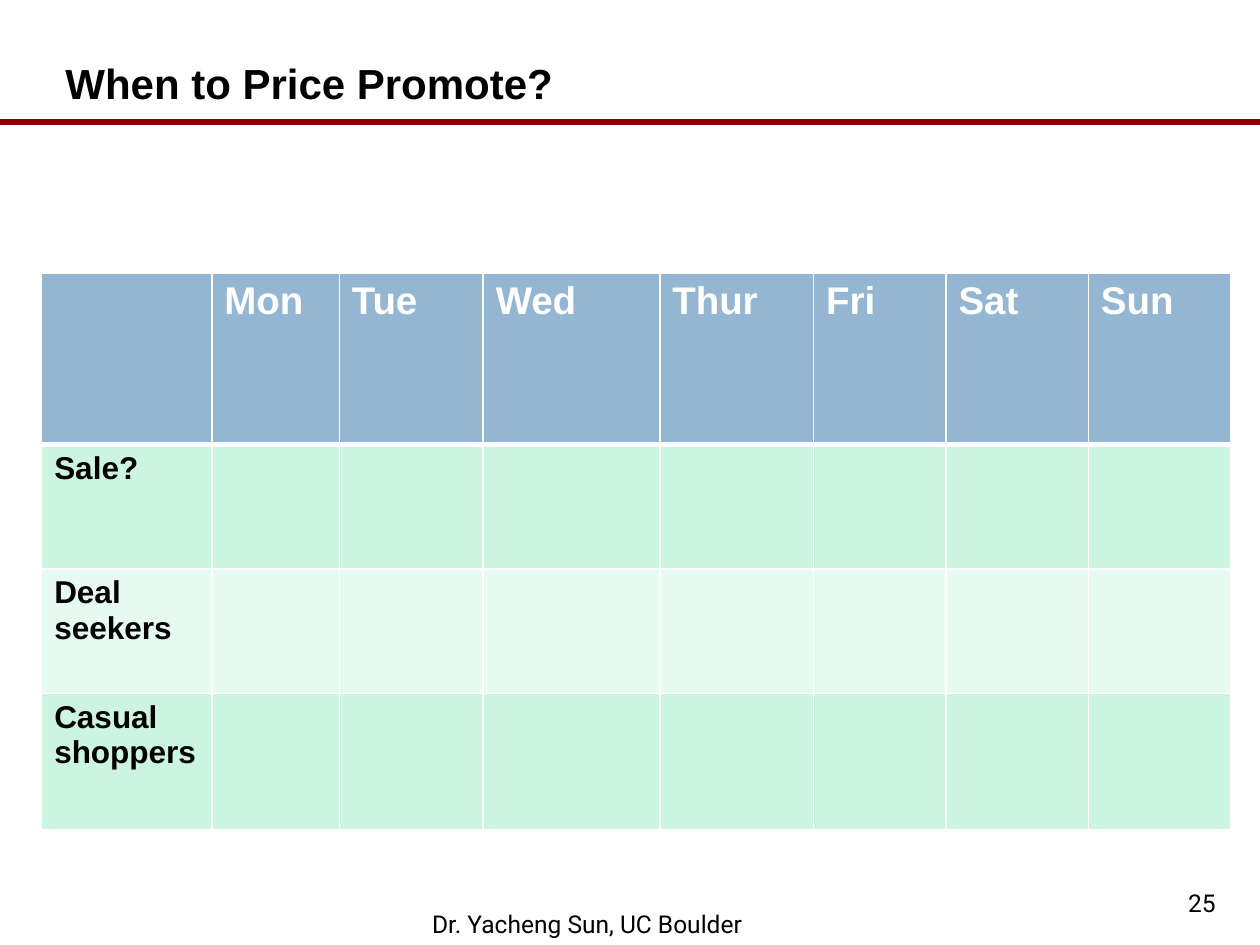
"""Build the price promotion slide with its weekly planning table."""
from lxml.etree import SubElement
from pptx import Presentation
from pptx.dml.color import RGBColor
from pptx.enum.shapes import MSO_CONNECTOR
from pptx.enum.text import MSO_ANCHOR, PP_ALIGN
from pptx.oxml.ns import qn
from pptx.util import Cm, Pt

BLACK = RGBColor(0x00, 0x00, 0x00)
WHITE = RGBColor(0xFF, 0xFF, 0xFF)
MAROON = RGBColor(0x80, 0x00, 0x00)
HEADER_BLUE = RGBColor(0x94, 0xB6, 0xD2)
MINT = RGBColor(0xCB, 0xF5, 0xE1)
PALE_MINT = RGBColor(0xE7, 0xFA, 0xF1)


def add_text(text_frame, text, font_name, size, color, bold):
    run = text_frame.paragraphs[0].add_run()
    run.text = text
    run.font.name = font_name
    run.font.size = Pt(size)
    run.font.bold = bold
    run.font.color.rgb = color


def add_border(cell, side, width):
    border = SubElement(cell._tc.get_or_add_tcPr(), qn(f"a:ln{side}"), w=str(Pt(width)))
    fill = SubElement(border, qn("a:solidFill"))
    SubElement(fill, qn("a:srgbClr"), val=str(WHITE))


presentation = Presentation()
presentation.slide_width = Cm(25.4)
presentation.slide_height = Cm(19.05)
slide = presentation.slides.add_slide(presentation.slide_layouts[6])

title_rule = slide.shapes.add_connector(
    MSO_CONNECTOR.STRAIGHT, Cm(0), Cm(2.46), Cm(25.4), Cm(2.46)
)
title_rule.line.color.rgb = MAROON
title_rule.line.width = Pt(3)
SubElement(title_rule._element.spPr, qn("a:effectLst"))

text_boxes = [
    ("When to Price Promote?", (1.07, 0.13, 23.29, 2.18),
     MSO_ANCHOR.BOTTOM, PP_ALIGN.LEFT, "Arial", 24, True),
    ("25", (19.48, 17.35, 5.28, 1.27),
     MSO_ANCHOR.BOTTOM, PP_ALIGN.RIGHT, "Roboto", 14, False),
    ("Dr. Yacheng Sun, UC Boulder", (8.46, 18.21, 9.53, 0.84),
     MSO_ANCHOR.TOP, PP_ALIGN.LEFT, "Roboto", 14, False),
]
for text, box, anchor, alignment, font_name, size, bold in text_boxes:
    shape = slide.shapes.add_textbox(*[Cm(length) for length in box])
    shape.text_frame.word_wrap = True
    shape.text_frame.vertical_anchor = anchor
    shape.text_frame.paragraphs[0].alignment = alignment
    add_text(shape.text_frame, text, font_name, size, BLACK, bold)

days = ["Mon", "Tue", "Wed", "Thur", "Fri", "Sat", "Sun"]
row_labels = ["Sale?", "Deal seekers", "Casual shoppers"]
column_widths = [3.43, 2.57, 2.9, 3.56, 3.1, 2.67, 2.87, 2.87]
row_heights = [3.45, 2.51, 2.51, 2.74]
row_fills = [HEADER_BLUE, MINT, PALE_MINT, MINT]

table = slide.shapes.add_table(
    len(row_heights), len(column_widths), Cm(0.84), Cm(5.51),
    Cm(sum(column_widths)), Cm(sum(row_heights)),
).table
for column, width in zip(table.columns, column_widths):
    column.width = Cm(width)

for row_index, (row, height) in enumerate(zip(table.rows, row_heights)):
    row.height = Cm(height)
    top_width = 3 if row_index == 1 else 1
    bottom_width = 3 if row_index == 0 else 1
    for cell in row.cells:
        for side, width in (("L", 1), ("R", 1), ("T", top_width), ("B", bottom_width)):
            add_border(cell, side, width)
        cell.fill.solid()
        cell.fill.fore_color.rgb = row_fills[row_index]

for column_index, day in enumerate(days, start=1):
    add_text(table.cell(0, column_index).text_frame, day, "Arial", 22, WHITE, True)
for row_index, label in enumerate(row_labels, start=1):
    add_text(table.cell(row_index, 0).text_frame, label, "Arial", 18, BLACK, True)

presentation.save("out.pptx")
